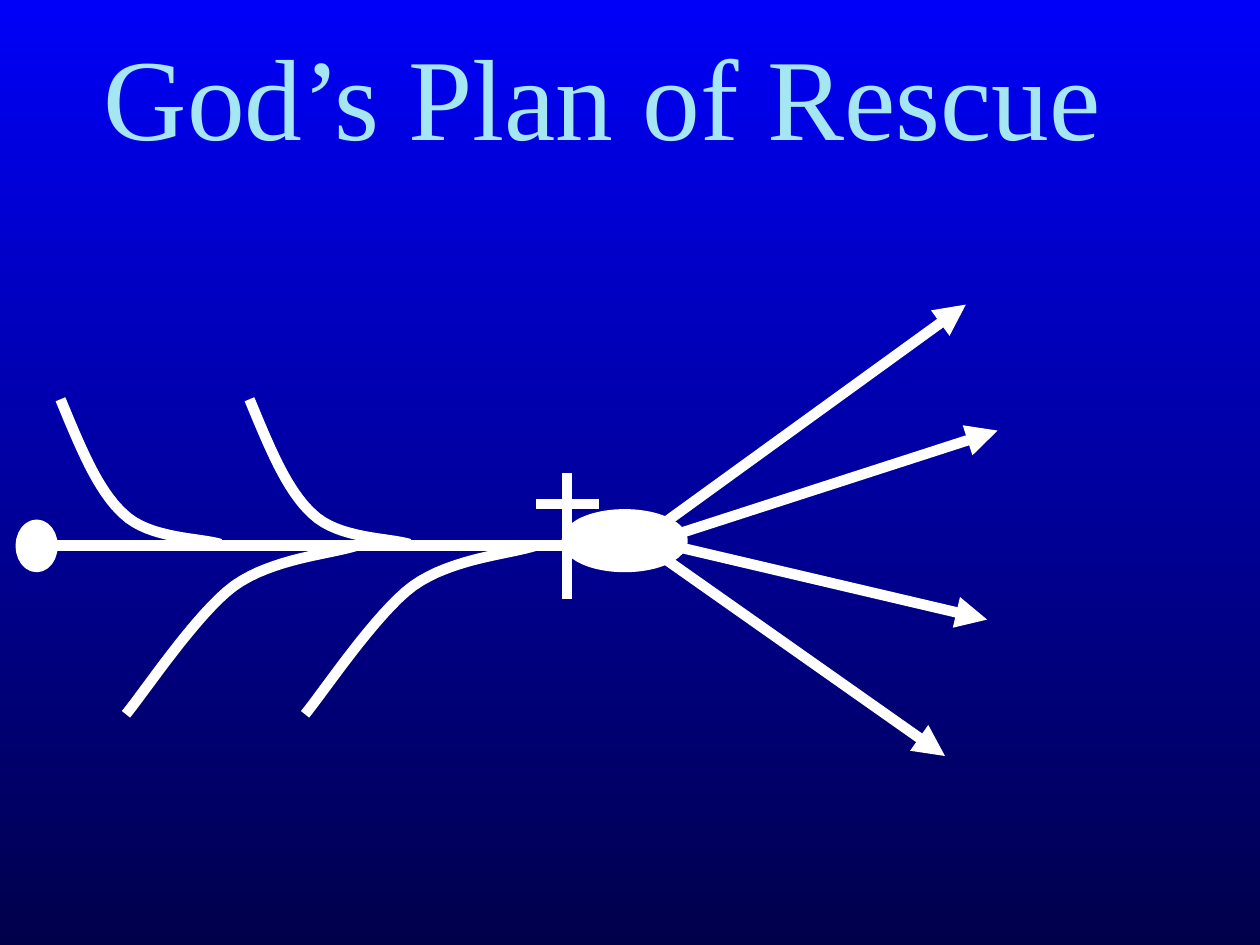
from lxml import etree
from pptx import Presentation
from pptx.dml.color import RGBColor
from pptx.enum.shapes import MSO_CONNECTOR, MSO_SHAPE
from pptx.enum.text import MSO_ANCHOR, PP_ALIGN
from pptx.oxml.ns import qn
from pptx.util import Cm, Pt

STRAIGHT = MSO_CONNECTOR.STRAIGHT
OVAL = MSO_SHAPE.OVAL
MIDDLE = MSO_ANCHOR.MIDDLE
CENTER = PP_ALIGN.CENTER

WHITE = RGBColor(0xFF, 0xFF, 0xFF)
AQUA = RGBColor(0xA5, 0xE6, 0xF3)
BLUE = RGBColor(0x00, 0x00, 0xF8)
NAVY = RGBColor(0x00, 0x00, 0x4A)
WEIGHT = Pt(6)
STEPS = 16


def stroke(line):
    line.color.rgb = WHITE
    line.width = WEIGHT


def add_line(x1, y1, x2, y2, arrow=False):
    line = slide.shapes.add_connector(STRAIGHT, Cm(x1), Cm(y1), Cm(x2), Cm(y2))
    stroke(line.line)
    if arrow:
        etree.SubElement(line.line._get_or_add_ln(), qn("a:tailEnd"), type="triangle")
    etree.SubElement(line._element.spPr, qn("a:effectLst"))


deck = Presentation()
deck.slide_width, deck.slide_height = Cm(25.4), Cm(19.05)
slide = deck.slides.add_slide(deck.slide_layouts[6])

# Background, blue fading down to navy
fill = slide.background.fill
fill.gradient()
fill.gradient_angle = 270
for stop, color, pos in zip(fill.gradient_stops, (BLUE, NAVY), (0, 1)):
    stop.color.rgb = color
    stop.position = pos

# Spine
add_line(0.84, 11, 11.43, 11)

# Ribs: two Bezier pieces each, as offsets from the outer tip
UPPER = [(0, 0), (0.38, 0.91), (0.74, 1.83), (1.27, 2.31),
         (1.8, 2.82), (2.82, 2.79), (3.23, 2.92)]
LOWER = [(0, 0), (0.36, -0.43), (1.42, -2.03), (2.18, -2.59),
         (2.97, -3.15), (4.14, -3.23), (4.65, -3.4)]
for left, top, curve in ((1.22, 8.05, UPPER), (5.03, 8.05, UPPER),
                         (2.54, 14.4, LOWER), (6.15, 14.4, LOWER)):
    points = []
    for first in (0, 3):
        knots = curve[first:first + 4]
        for step in range(1, STEPS + 1):
            t = step / STEPS
            parts = ((1 - t) ** 3, 3 * t * (1 - t) ** 2, 3 * t ** 2 * (1 - t), t ** 3)
            x = sum(p * k[0] for p, k in zip(parts, knots))
            y = sum(p * k[1] for p, k in zip(parts, knots))
            points.append((Cm(left + x), Cm(top + y)))
    pen = slide.shapes.build_freeform(Cm(left), Cm(top))
    pen.add_line_segments(points, close=False)
    rib = pen.convert_to_shape()
    rib.fill.background()
    rib.shadow.inherit = False
    stroke(rib.line)

# Cross
add_line(11.43, 9.53, 11.43, 12.07)
add_line(10.8, 10.16, 12.07, 10.16)

# Head and tail ovals
for box in ((11.43, 10.37, 2.33, 1.06), (0.42, 10.58, 0.64, 0.85)):
    oval = slide.shapes.add_shape(OVAL, *map(Cm, box))
    oval.fill.solid()
    oval.fill.fore_color.rgb = WHITE
    oval.shadow.inherit = False
    stroke(oval.line)

# Arrows fanning out from the head
for ends in ((13.34, 10.58, 19.47, 6.14), (13.55, 10.8, 20.11, 8.68),
             (13.55, 11, 19.9, 12.49), (13.34, 11.22, 19.05, 15.24)):
    add_line(*ends, arrow=True)

# Title
title = slide.shapes.add_textbox(Cm(0.84), Cm(0.58), Cm(22.61), Cm(3.18))
frame = title.text_frame
frame.word_wrap = True
frame.vertical_anchor = MIDDLE
para = frame.paragraphs[0]
para.alignment = CENTER
para.line_spacing = 0.8
run = para.add_run()
run.text = "God’s Plan of Rescue"
for name, value in {"name": "Times New Roman", "size": Pt(66)}.items():
    setattr(run.font, name, value)
run.font.color.rgb = AQUA

deck.save("out.pptx")
